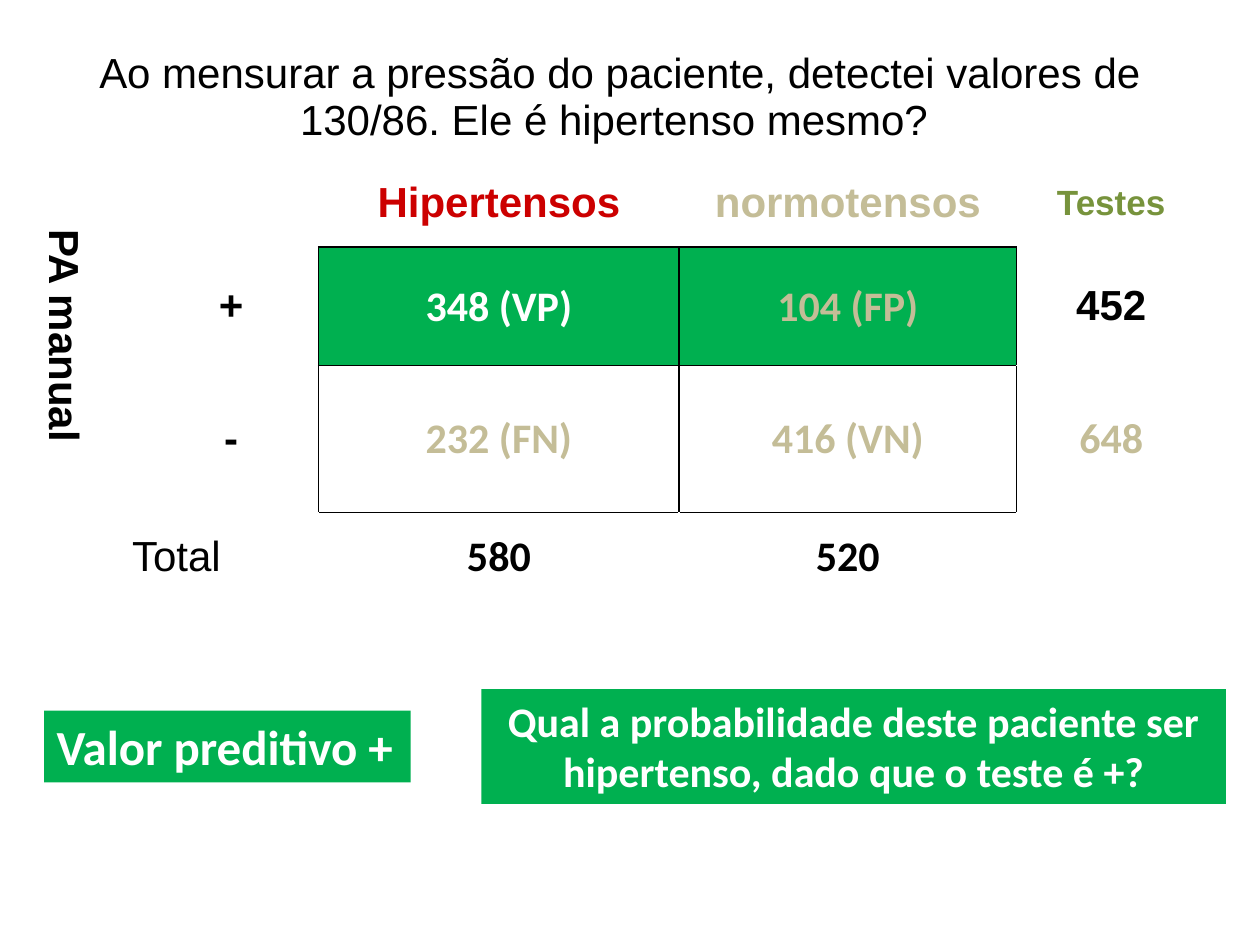
from lxml import etree
from pptx import Presentation
from pptx.dml.color import RGBColor
from pptx.enum.shapes import MSO_SHAPE
from pptx.enum.text import MSO_ANCHOR, MSO_AUTO_SIZE, PP_ALIGN
from pptx.oxml.ns import qn
from pptx.util import Inches, Pt

BLACK = RGBColor(0x00, 0x00, 0x00)
WHITE = RGBColor(0xFF, 0xFF, 0xFF)
GREEN = RGBColor(0x00, 0xB0, 0x50)
RED = RGBColor(0xCC, 0x00, 0x00)
TAN = RGBColor(0xC4, 0xBD, 0x97)
OLIVE = RGBColor(0x77, 0x93, 0x3C)

RECT = MSO_SHAPE.RECTANGLE
MIDDLE = MSO_ANCHOR.MIDDLE
GROW = MSO_AUTO_SIZE.SHAPE_TO_FIT_TEXT
CENTER = PP_ALIGN.CENTER
LEFT = PP_ALIGN.LEFT

COLS = [0.87, 1.39, 2.86, 2.68, 1.5]
ROWS = [0.98, 0.7, 0.94, 1.17, 0.7]
MERGES = [(0, 0, 0, 4), (1, 0, 3, 0), (4, 0, 4, 1)]
COUNTS = [(2, 2), (2, 3), (3, 2), (3, 3)]
SIDES = [("lnL", 0, -1), ("lnR", 0, 1), ("lnT", -1, 0), ("lnB", 1, 0)]

TITLE = ("Ao mensurar a pressão do paciente, detectei valores de "
         "130/86. Ele é hipertenso mesmo? ")

TEXTS = [
    (0, 0, TITLE, "Arial", 24, BLACK, False),
    (1, 0, "PA manual", "Arial", 24, BLACK, True),
    (1, 2, "Hipertensos", "Arial", 24, RED, True),
    (1, 3, "normotensos", "Arial", 24, TAN, True),
    (1, 4, "Testes", "Arial", 20, OLIVE, True),
    (2, 1, "+", "Arial", 24, BLACK, True),
    (2, 2, "348 (VP)", "Calibri", 24, WHITE, True),
    (2, 3, "104 (FP)", "Calibri", 24, TAN, True),
    (2, 4, "452", "Arial", 24, BLACK, True),
    (3, 1, "-", "Arial", 24, BLACK, True),
    (3, 2, "232 (FN)", "Calibri", 24, TAN, True),
    (3, 3, "416 (VN)", "Calibri", 24, TAN, True),
    (3, 4, "648", "Calibri", 24, TAN, True),
    (4, 0, "Total", "Arial", 24, BLACK, False),
    (4, 2, "580", "Calibri", 24, BLACK, True),
    (4, 3, "520", "Calibri", 24, BLACK, True),
]


def add_run(para, text, font, size, color, bold):
    run = para.add_run()
    run.text = text
    run.font.name = font
    run.font.size = Pt(size)
    run.font.color.rgb = color
    run.font.bold = bold


def fill_cell(cell, color):
    cell.fill.solid()
    cell.fill.fore_color.rgb = color
    cell.vertical_anchor = MIDDLE


def write_cell(cell, text, font, size, color, bold):
    para = cell.text_frame.paragraphs[0]
    para.alignment = CENTER
    add_run(para, text, font, size, color, bold)


def trim_cell(cell):
    cell.margin_left = cell.margin_right = Inches(0.01)
    cell.margin_top = Inches(0.01)
    cell.margin_bottom = 0


def draw_edges(cell, tags):
    props = cell._tc.get_or_add_tcPr()
    for spot, tag in enumerate(tags):
        line = etree.Element(qn("a:" + tag), w=str(Pt(1)))
        fill = etree.SubElement(line, qn("a:solidFill"))
        etree.SubElement(fill, qn("a:srgbClr"), val=str(BLACK))
        props.insert(spot, line)


def edge_tags(row, col):
    if (row, col) in COUNTS:
        return [tag for tag, down, over in SIDES]
    return [tag for tag, down, over in SIDES
            if (row + down, col + over) in COUNTS]


def add_grid(slide):
    frame = slide.shapes.add_table(
        len(ROWS), len(COLS), Inches(0.27), Inches(0.28),
        Inches(sum(COLS)), Inches(sum(ROWS)))
    table = frame.table
    table.first_row = False
    table.horz_banding = False
    for col, width in zip(table.columns, COLS):
        col.width = Inches(width)
    for row, height in zip(table.rows, ROWS):
        row.height = Inches(height)
    for top, left, low, right in MERGES:
        table.cell(top, left).merge(table.cell(low, right))
    for row in range(len(ROWS)):
        for col in range(len(COLS)):
            cell = table.cell(row, col)
            fill_cell(cell, GREEN if (row, col) in COUNTS[:2] else WHITE)
            draw_edges(cell, edge_tags(row, col))
            if row > 1 and col in (2, 3):
                trim_cell(cell)
    for row, col, *style in TEXTS:
        write_cell(table.cell(row, col), *style)
    table.cell(3, 2).fill.background()
    table.cell(1, 0)._tc.get_or_add_tcPr().set("vert", "vert")


def add_label(slide, box, text, size, align, wrap):
    shape = slide.shapes.add_shape(RECT, *[Inches(n) for n in box])
    shape.shadow.inherit = False
    shape.fill.solid()
    shape.fill.fore_color.rgb = GREEN
    shape.line.fill.background()
    frame = shape.text_frame
    frame.word_wrap = wrap
    frame.auto_size = GROW
    frame.vertical_anchor = MSO_ANCHOR.TOP
    para = frame.paragraphs[0]
    para.alignment = align
    add_run(para, text, "Calibri", size, WHITE, True)


def main():
    deck = Presentation()
    deck.slide_width = Inches(10)
    deck.slide_height = Inches(7.5)
    slide = deck.slides.add_slide(deck.slide_layouts[6])
    add_grid(slide)
    add_label(slide, (0.35, 5.64, 2.91, 0.57),
              "Valor preditivo +", 28, LEFT, False)
    add_label(slide, (3.82, 5.47, 5.91, 0.91),
              "Qual a probabilidade deste paciente ser "
              "hipertenso, dado que o teste é +?", 24, CENTER, True)
    deck.save("out.pptx")


if __name__ == "__main__":
    main()
